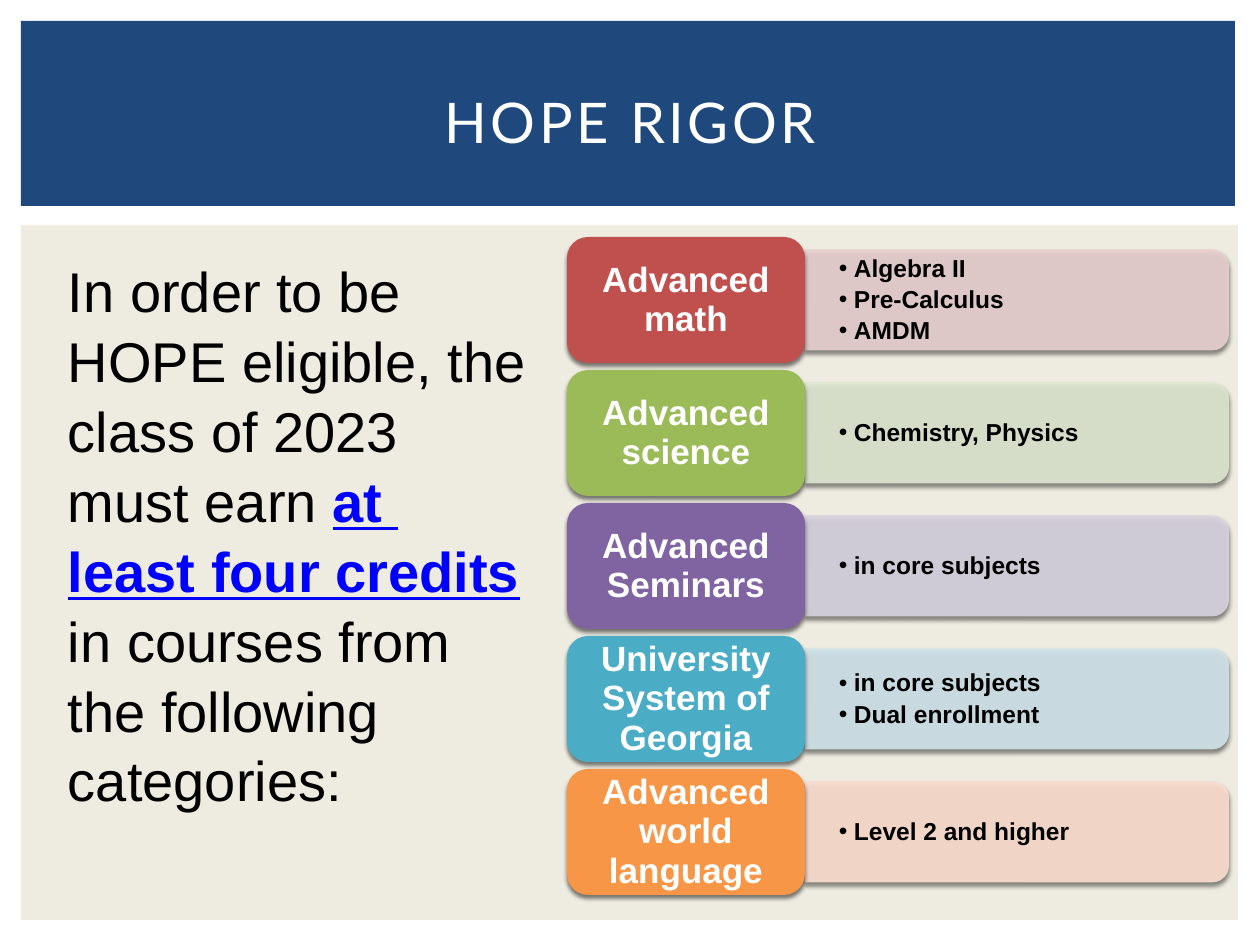
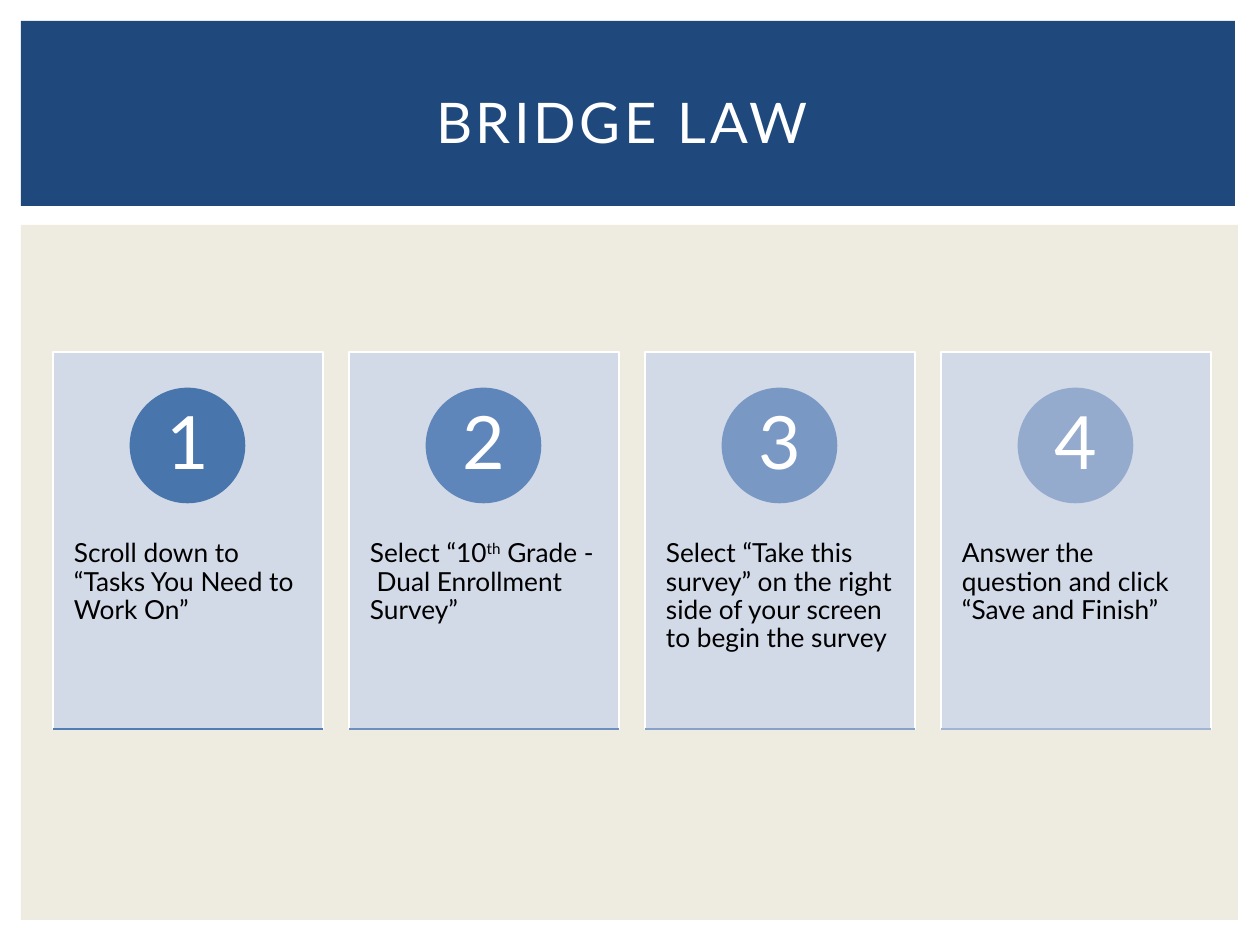
import dataclasses

import lxml.etree
import pptx
import pptx.dml.color
import pptx.enum.shapes
import pptx.enum.text
import pptx.oxml.ns
import pptx.util

SHAPES = pptx.enum.shapes.MSO_SHAPE
ALIGN = pptx.enum.text.PP_ALIGN
ANCHOR = pptx.enum.text.MSO_ANCHOR
EMU_PER_PX = 914400 / 126


@dataclasses.dataclass(frozen=True)
class Theme:
    """Colours, fonts and type sizes of the deck."""
    band: str = "1F497D"
    ground: str = "EEECE1"
    card: str = "D0D8E8"
    white: str = "FFFFFF"
    ink: str = "000000"
    emphasis: str = "0000FF"
    heading_font: str = "Lato"
    body_font: str = "Arial"
    title_size: int = 32
    intro_size: int = 32
    label_size: int = 20
    bullet_size: int = 14
    number_size: int = 42
    step_size: int = 15


THEME = Theme()

INTRO = [
    [("In order to be HOPE eligible, the", False)],
    [("class of 2023", False)],
    [("must earn ", False), ("at ", True)],
    [("least four credits", True)],
    [("in courses from the following categories:", False)],
]

CATEGORIES = [
    ("Advanced math", "C0504D", "E8D0D0", ["Algebra II", "Pre-Calculus", "AMDM"]),
    ("Advanced science", "9BBB59", "DEE7D1", ["Chemistry, Physics"]),
    ("Advanced Seminars", "8064A2", "D8D3E0", ["in core subjects"]),
    ("University System of Georgia", "4BACC6", "D0E3EA",
     ["in core subjects", "Dual enrollment"]),
    ("Advanced world language", "F79646", "FCDDCF", ["Level 2 and higher"]),
]

STEPS = [
    ("4875AC", "517DB5", [("Scroll down to “Tasks You Need to Work On”", False)]),
    ("5F86BA", "6C8FBF", [("Select “10", False), ("th", True),
                          (" Grade -  Dual Enrollment Survey”", False)]),
    ("7A98C4", "87A1C9", [("Select “Take this survey” on the right side of your "
                           "screen to begin the survey", False)]),
    ("95ABCE", "A2B4D4", [("Answer the question and click “Save and Finish”", False)]),
]


def px(length):
    """Turn px into EMU."""
    return pptx.util.Emu(round(length * EMU_PER_PX))


def rgb(colour):
    """Turn a hex string into a colour."""
    return pptx.dml.color.RGBColor.from_string(colour)


def add_child(parent, tag, **attributes):
    """Append a DrawingML element to its parent."""
    return lxml.etree.SubElement(parent, pptx.oxml.ns.qn(tag), attributes)


def add_box(slide, kind, box, fill, line=None):
    """Add a flat preset shape."""
    shape = slide.shapes.add_shape(kind, *map(px, box))
    shape.shadow.inherit = False
    shape.fill.solid()
    shape.fill.fore_color.rgb = rgb(fill)
    if line:
        shape.line.color.rgb = rgb(line)
        shape.line.width = pptx.util.Pt(1.5)
    else:
        shape.line.fill.background()
    return shape


def make_translucent(shape):
    """Give the fill of a shape 90% opacity."""
    colour = shape.element.spPr.find(pptx.oxml.ns.qn("a:solidFill"))[0]
    add_child(colour, "a:alpha", val="90000")


def add_shadow(shape):
    """Give a shape a soft shadow below it."""
    effects = shape.element.spPr.find(pptx.oxml.ns.qn("a:effectLst"))
    shadow = add_child(effects, "a:outerShdw", blurRad="31750", dist="25400",
                       dir="5400000", rotWithShape="0")
    colour = add_child(shadow, "a:srgbClr", val=THEME.ink)
    add_child(colour, "a:alpha", val="50000")


def set_frame(shape, insets, anchor):
    """Set wrapping, insets and anchor, and return the text frame."""
    frame = shape.text_frame
    frame.word_wrap = True
    frame.margin_left, frame.margin_top, frame.margin_right, frame.margin_bottom = map(px, insets)
    frame.vertical_anchor = anchor
    return frame


def format_paragraph(paragraph, face, size, colour, bold=False,
                     align=ALIGN.LEFT, spacing=0.9):
    """Set the font, alignment and line spacing of a paragraph."""
    paragraph.alignment = align
    paragraph.line_spacing = spacing
    paragraph.space_before = pptx.util.Pt(0)
    font = paragraph.font
    font.name = face
    font.size = pptx.util.Pt(size)
    font.bold = bold
    font.color.rgb = rgb(colour)


def next_paragraph(frame, index):
    """Return the first paragraph of a frame, or a new one."""
    return frame.add_paragraph() if index else frame.paragraphs[0]


def add_run(paragraph, text):
    """Append a run of text to a paragraph."""
    run = paragraph.add_run()
    run.text = text
    return run


def add_bands(slide):
    """Place the title band and the ground on the layout of a slide."""
    bands = [((21, 225, 1217, 695), THEME.ground), ((21, 21, 1214, 185), THEME.band)]
    tree = slide.slide_layout.shapes.element
    for index, (box, fill) in enumerate(bands):
        band = add_box(slide, SHAPES.RECTANGLE, box, fill)
        band.element.nvSpPr.cNvPr.set("id", str(101 + index))
        tree.insert(2 + index, band.element)


def add_title(slide, text):
    """Fill and format the title placeholder."""
    title = slide.shapes.title
    title.left, title.top, title.width, title.height = map(px, (53, 49, 1155, 145))
    frame = set_frame(title, (13, 6, 13, 6), ANCHOR.MIDDLE)
    paragraph = frame.paragraphs[0]
    run = add_run(paragraph, text)
    format_paragraph(paragraph, THEME.heading_font, THEME.title_size, THEME.white,
                     align=ALIGN.CENTER, spacing=1.0)
    run.font.bold = False
    run._r.get_or_add_rPr().set("spc", "200")


def add_intro(slide):
    """Add the introduction with its emphasised phrase."""
    shape = slide.shapes.add_textbox(*map(px, (55, 248, 501, 624)))
    frame = set_frame(shape, (13, 6, 13, 6), ANCHOR.TOP)
    for index, pieces in enumerate(INTRO):
        paragraph = next_paragraph(frame, index)
        format_paragraph(paragraph, THEME.body_font, THEME.intro_size, THEME.ink, spacing=1.04)
        for text, emphasised in pieces:
            run = add_run(paragraph, text)
            if emphasised:
                run.font.bold = True
                run.font.underline = True
                run.font.color.rgb = rgb(THEME.emphasis)


def add_bullets(slide, box, items):
    """Add a text box of bulleted items."""
    shape = slide.shapes.add_textbox(*map(px, box))
    frame = set_frame(shape, (34, 18, 34, 18), ANCHOR.MIDDLE)
    for index, item in enumerate(items):
        paragraph = next_paragraph(frame, index)
        add_run(paragraph, item)
        properties = paragraph._p.get_or_add_pPr()
        properties.set("marL", str(px(15)))
        properties.set("indent", str(-px(15)))
        add_child(properties, "a:buFont", typeface=THEME.body_font)
        add_child(properties, "a:buChar", char="•")
        format_paragraph(paragraph, THEME.body_font, THEME.bullet_size, THEME.ink,
                         bold=True, spacing=0.94)
        paragraph.space_after = pptx.util.Pt(2.1)


def add_category(slide, top, name, colour, tint, items):
    """Add a category label with the panel of its courses."""
    length, depth = 424, 101
    middle = top + 63
    panel = add_box(slide, SHAPES.ROUND_2_SAME_RECTANGLE,
                    (805 + (length - depth) / 2, middle - length / 2, depth, length), tint)
    panel.rotation = 90
    make_translucent(panel)
    add_shadow(panel)
    add_bullets(slide, (805, middle - 46, 418, 92), items)
    label = add_box(slide, SHAPES.ROUNDED_RECTANGLE, (567, top, 238, 126), colour)
    add_shadow(label)
    frame = set_frame(label, (16, 11, 16, 11), ANCHOR.MIDDLE)
    paragraph = frame.paragraphs[0]
    add_run(paragraph, name)
    format_paragraph(paragraph, THEME.body_font, THEME.label_size, THEME.white,
                     bold=True, align=ALIGN.CENTER, spacing=0.94)


def add_rule(slide, left, right, y, colour):
    """Add a horizontal line."""
    rule = slide.shapes.add_connector(pptx.enum.shapes.MSO_CONNECTOR.STRAIGHT,
                                      px(left), px(y), px(right), px(y))
    rule.line.color.rgb = rgb(colour)
    rule.line.width = pptx.util.Pt(1.5)
    add_child(rule.element.spPr, "a:effectLst")


def add_step(slide, left, number, circle_colour, rule_colour, pieces):
    """Add a card with a numbered circle and a line along its foot."""
    top, width, height = 352, 270, 377
    card = add_box(slide, SHAPES.RECTANGLE, (left, top, width, height), THEME.card, THEME.white)
    make_translucent(card)
    frame = set_frame(card, (21, 188, 21, 0), ANCHOR.TOP)
    paragraph = frame.paragraphs[0]
    format_paragraph(paragraph, THEME.heading_font, THEME.step_size, THEME.ink)
    for text, raised in pieces:
        run = add_run(paragraph, text)
        if raised:
            run._r.get_or_add_rPr().set("baseline", "30000")
    circle = add_box(slide, SHAPES.OVAL, (left + 78, top + 37, 113, 113),
                     circle_colour, circle_colour)
    frame = set_frame(circle, (0, 0, 0, 0), ANCHOR.MIDDLE)
    paragraph = frame.paragraphs[0]
    add_run(paragraph, str(number))
    format_paragraph(paragraph, THEME.heading_font, THEME.number_size, THEME.white,
                     align=ALIGN.CENTER)
    add_rule(slide, left, left + width, top + height, rule_colour)


def main():
    """Build both slides and save them."""
    presentation = pptx.Presentation()
    presentation.slide_width = px(1260)
    presentation.slide_height = px(945)
    layout = presentation.slide_layouts[5]

    rigor = presentation.slides.add_slide(layout)
    add_bands(rigor)
    add_title(rigor, "HOPE RIGOR")
    add_intro(rigor)
    for index, category in enumerate(CATEGORIES):
        add_category(rigor, 237 + 133 * index, *category)

    bridge = presentation.slides.add_slide(layout)
    add_title(bridge, "BRIDGE LAW ")
    for index, step in enumerate(STEPS):
        add_step(bridge, 53 + 296 * index, index + 1, *step)

    presentation.save("out.pptx")


if __name__ == "__main__":
    main()
